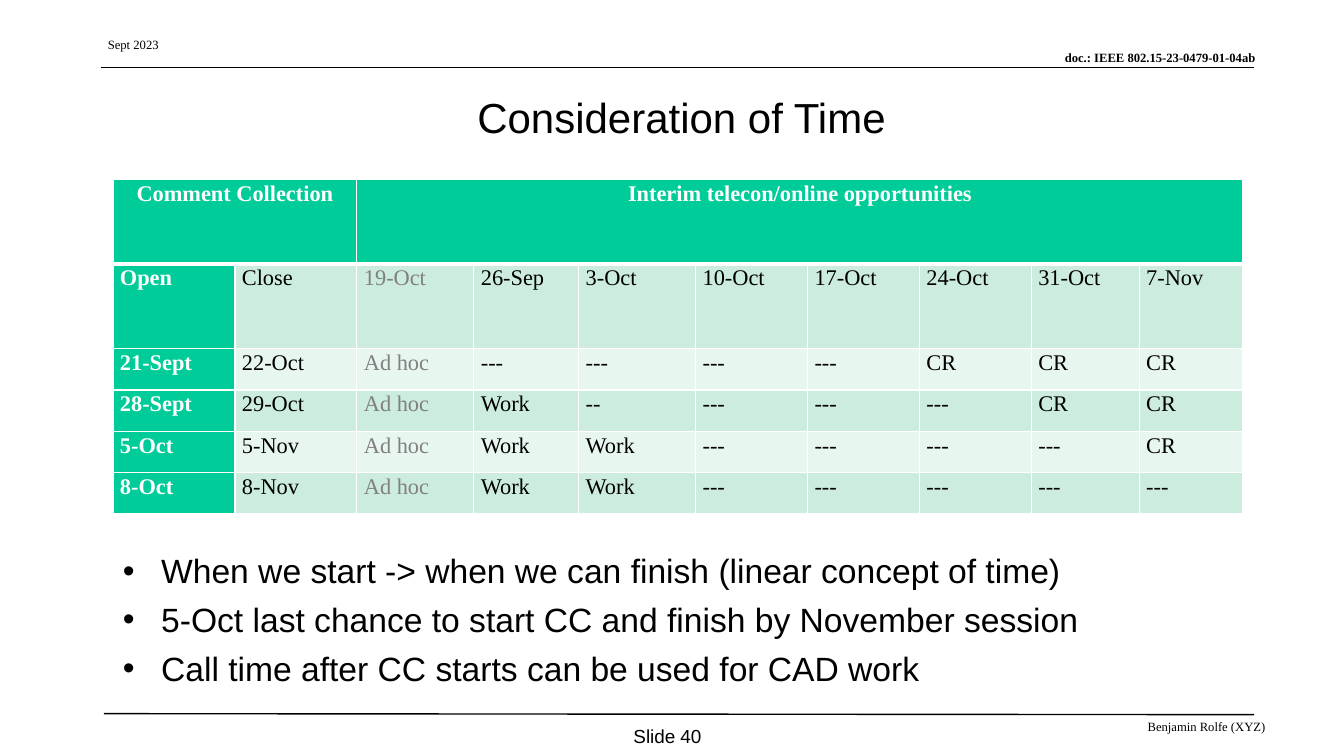
"""Build the "Consideration of Time" slide with its schedule table."""
from lxml.etree import SubElement
from pptx import Presentation
from pptx.dml.color import RGBColor
from pptx.enum.shapes import MSO_CONNECTOR
from pptx.enum.text import MSO_ANCHOR, MSO_AUTO_SIZE, PP_ALIGN
from pptx.oxml.ns import qn
from pptx.util import Inches, Pt

BLACK = RGBColor(0x00, 0x00, 0x00)
WHITE = RGBColor(0xFF, 0xFF, 0xFF)
GRAY = RGBColor(0x80, 0x80, 0x80)
GREEN = RGBColor(0x00, 0xCC, 0x99)
MINT = RGBColor(0xCC, 0xEC, 0xDE)
PALE = RGBColor(0xE7, 0xF6, 0xEF)
SERIF = "Times New Roman"


def fill_text(frame, lines, anchor, margins, font, **paragraph_format):
    """Write lines into a text frame, one formatted paragraph each."""
    frame.word_wrap = True
    frame.auto_size = MSO_AUTO_SIZE.NONE
    frame.vertical_anchor = anchor
    frame.margin_left = frame.margin_right = Inches(margins[0])
    frame.margin_top = frame.margin_bottom = Inches(margins[1])
    for index, line in enumerate(lines):
        para = frame.paragraphs[0] if index == 0 else frame.add_paragraph()
        for name, value in paragraph_format.items():
            setattr(para, name, value)
        span = para.add_run()
        span.text = line
        span.font.name, size, span.font.bold = font
        span.font.size = Pt(size)
        span.font.color.rgb = BLACK


def draw_borders(cell, bottom_width):
    """Give a cell white borders on all four sides."""
    properties = cell._tc.get_or_add_tcPr()
    widths = {"a:lnL": 1, "a:lnR": 1, "a:lnT": 1, "a:lnB": bottom_width}
    for position, (side, width) in enumerate(widths.items()):
        border = SubElement(properties, qn(side), w=str(Pt(width)))
        SubElement(SubElement(border, qn("a:solidFill")), qn("a:srgbClr"), val=str(WHITE))
        properties.insert(position, border)


deck = Presentation()
deck.slide_width = Inches(13.33)
deck.slide_height = Inches(7.5)
page = deck.slides.add_slide(deck.slide_layouts[5])

rules = [(1, 0.67, 12.44, 0.67), (1.03, 7.08, 12.44, 7.09)]
for ends in rules:
    rule = page.shapes.add_connector(MSO_CONNECTOR.STRAIGHT, *map(Inches, ends))
    rule.line.color.rgb = BLACK
    rule.line.width = Pt(1)
    SubElement(rule._element.spPr, qn("a:effectLst"))

title = page.shapes.title
title.left, title.top, title.width, title.height = map(Inches, (1.1, 0.75, 11.32, 0.82))
fill_text(title.text_frame, ["Consideration of Time"], MSO_ANCHOR.MIDDLE,
          (0.1, 0.05), ("Arial", 30, False), alignment=PP_ALIGN.CENTER)

labels = [
    ("doc.: IEEE 802.15-23-0479-01-04ab", (6.67, 0.5, 5.78, 0.15), MSO_ANCHOR.BOTTOM,
     (0, 0), (SERIF, 9, True), PP_ALIGN.RIGHT, 0),
    ("Sept 2023", (1, 0.33, 2.56, 0.23), MSO_ANCHOR.TOP,
     (0.07, 0.04), (SERIF, 9, False), PP_ALIGN.LEFT, 0),
    ("Benjamin Rolfe (XYZ)", (7.16, 7.09, 5.46, 0.23), MSO_ANCHOR.TOP,
     (0.07, 0.04), (SERIF, 9, False), PP_ALIGN.RIGHT, 5.6),
    ("Slide 40", (6.14, 7.17, 0.96, 0.26), MSO_ANCHOR.MIDDLE,
     (0, 0), ("Arial", 13.5, False), PP_ALIGN.CENTER, 0),
]
for text, place, anchor, margins, font, alignment, space in labels:
    box = page.shapes.add_textbox(*map(Inches, place))
    fill_text(box.text_frame, [text], anchor, margins, font,
              alignment=alignment, space_before=Pt(space))

points = [
    "When we start -> when we can finish (linear concept of time)",
    "5-Oct last chance to start CC and finish by November session",
    "Call time after CC starts can be used for CAD work",
]
body = page.shapes.add_textbox(*map(Inches, (1.12, 5.41, 11.32, 1.41)))
fill_text(body.text_frame, points, MSO_ANCHOR.TOP, (0.1, 0.05),
          ("Arial", 24, False), space_before=Pt(6))
for para in body.text_frame.paragraphs:
    properties = para._p.get_or_add_pPr()
    properties.set("marL", str(Inches(0.38)))
    properties.set("indent", str(-Inches(0.38)))
    SubElement(properties, qn("a:buFont"), typeface="Arial")
    SubElement(properties, qn("a:buChar"), char="•")

schedule = [
    ["Comment Collection", "", "Interim telecon/online opportunities"] + [""] * 7,
    ["Open", "Close", "19-Oct", "26-Sep", "3-Oct", "10-Oct", "17-Oct", "24-Oct", "31-Oct", "7-Nov"],
    ["21-Sept", "22-Oct", "Ad hoc", "---", "---", "---", "---", "CR", "CR", "CR"],
    ["28-Sept", "29-Oct", "Ad hoc", "Work", "--", "---", "---", "---", "CR", "CR"],
    ["5-Oct", "5-Nov", "Ad hoc", "Work", "Work", "---", "---", "---", "---", "CR"],
    ["8-Oct", "8-Nov", "Ad hoc", "Work", "Work", "---", "---", "---", "---", "---"],
]
column_widths = [1.21, 1.21, 1.16, 1.04, 1.16, 1.11, 1.11, 1.11, 1.07, 1.03]
row_heights = [0.84, 0.84, 0.41, 0.41, 0.41, 0.41]
table = page.shapes.add_table(len(row_heights), len(column_widths),
                              *map(Inches, (1.12, 1.78, 11.22, 3.32))).table
for column, width in zip(table.columns, column_widths):
    column.width = Inches(width)
for row, height in zip(table.rows, row_heights):
    row.height = Inches(height)
for first, last in [(0, 1), (2, 9)]:
    table.cell(0, first).merge(table.cell(0, last))

for row_index, entries in enumerate(schedule):
    for column_index, entry in enumerate(entries):
        cell = table.cell(row_index, column_index)
        heading = row_index == 0 or column_index == 0
        cell.margin_left = cell.margin_right = Inches(0.07)
        cell.margin_top = cell.margin_bottom = 0
        cell.fill.solid()
        cell.fill.fore_color.rgb = GREEN if heading else MINT if row_index % 2 else PALE
        draw_borders(cell, 3 if row_index == 0 else 1)
        if not entry:
            continue
        para = cell.text_frame.paragraphs[0]
        para.alignment = PP_ALIGN.LEFT if row_index else PP_ALIGN.CENTER
        para.line_spacing = 1.07
        span = para.add_run()
        span.text = entry
        for name, value in {"name": SERIF, "size": Pt(16), "bold": heading}.items():
            setattr(span.font, name, value)
        span.font.color.rgb = WHITE if heading else GRAY if column_index == 2 else BLACK

deck.save("out.pptx")
